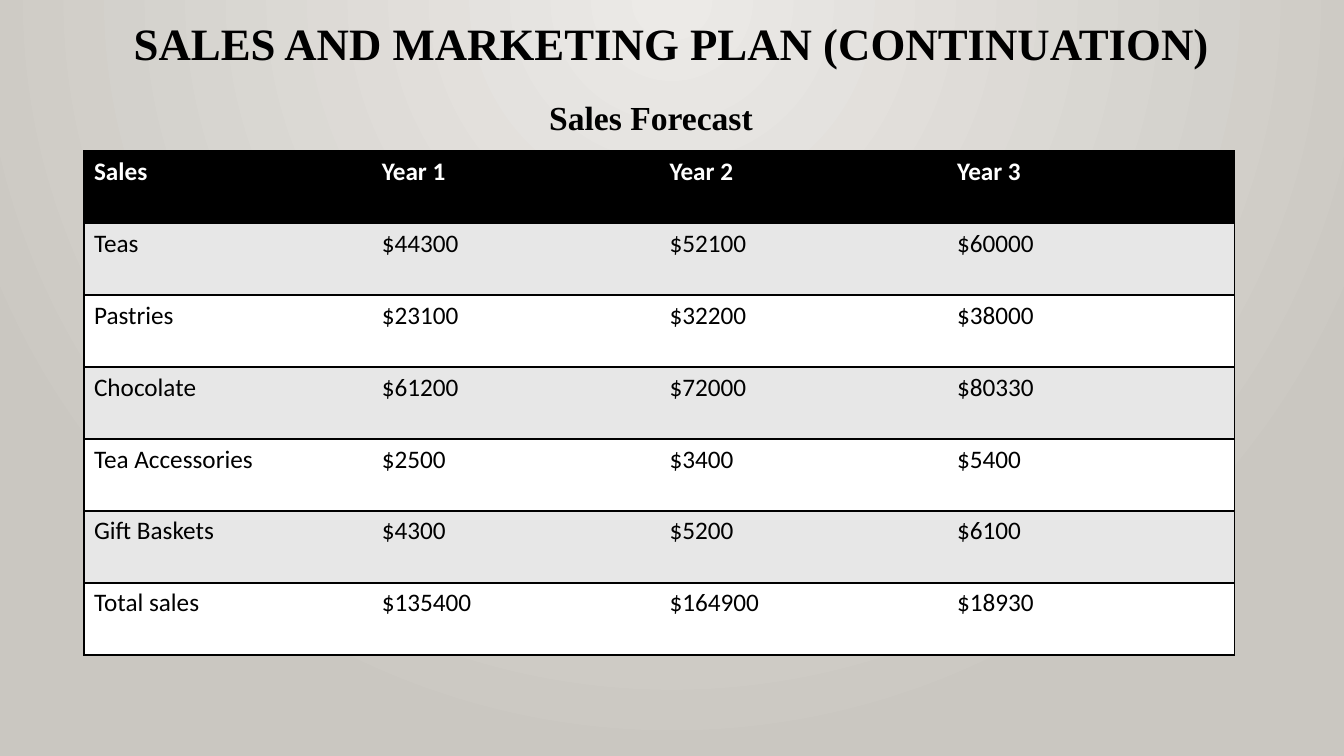
"""Build the sales forecast slide with its three-year table."""
from lxml import etree
from pptx import Presentation
from pptx.dml.color import RGBColor
from pptx.enum.text import MSO_ANCHOR as Anchor, PP_ALIGN as Align
from pptx.oxml import parse_xml
from pptx.oxml.ns import nsdecls, qn
from pptx.util import Emu, Pt

SLIDE_SIZE = (1344, 756)
BLACK = RGBColor(0x00, 0x00, 0x00)
WHITE = RGBColor(0xFF, 0xFF, 0xFF)
BAND = RGBColor(0xE7, 0xE7, 0xE7)
GLOW = RGBColor(0xEC, 0xEA, 0xE7)
STONE = RGBColor(0xCA, 0xC7, 0xC1)
NO_STYLE = "{2D5ABB26-0587-4C30-8999-92F81FD0307C}"

HEADINGS = [
    {"text": "SALES AND MARKETING PLAN (CONTINUATION)", "box": (50, 17, 1243, 71),
     "size": 32, "spacing": 0.9, "left_inset": 10},
    {"text": "Sales Forecast", "box": (42, 84, 1218, 518),
     "size": 24, "spacing": 1.2, "left_inset": 10},
]
TABLE_BOX = (84, 151, 1151, 504)
SALES = [
    ("Sales", "Year 1", "Year 2", "Year 3"),
    ("Teas", "$44300", "$52100", "$60000"),
    ("Pastries", "$23100", "$32200", "$38000"),
    ("Chocolate", "$61200", "$72000", "$80330"),
    ("Tea Accessories", "$2500", "$3400", "$5400"),
    ("Gift Baskets", "$4300", "$5200", "$6100"),
    ("Total sales", "$135400", "$164900", "$18930"),
]


def px(length):
    return Emu(length * 9525 * 96 * 10 // 1008)


def set_font(font, color, **values):
    for name, value in values.items():
        setattr(font, name, value)
    font.color.rgb = color


def paint_background(slide):
    fill = slide.background.fill
    fill.gradient()
    for stop, color in zip(fill.gradient_stops, (GLOW, STONE)):
        stop.color.rgb = color
    gradient = next(slide.element.iter(qn("a:gradFill")))
    gradient.remove(gradient.find(qn("a:lin")))
    circle = etree.SubElement(gradient, qn("a:path"), {"path": "circle"})
    center = {"l": "43000", "t": "0", "r": "43000", "b": "100000"}
    etree.SubElement(circle, qn("a:fillToRect"), center)


def add_heading(slide, text, box, size, spacing, left_inset):
    frame = slide.shapes.add_textbox(*map(px, box)).text_frame
    frame.word_wrap = True
    frame.vertical_anchor = Anchor.TOP
    frame.margin_left = px(left_inset)
    paragraph = frame.paragraphs[0]
    paragraph.text = text
    paragraph.alignment = Align.CENTER
    paragraph.line_spacing = spacing
    set_font(paragraph.font, BLACK, name="Times New Roman", size=Pt(size), bold=True)


def add_border(cell, side):
    properties = cell._tc.get_or_add_tcPr()
    properties.append(parse_xml(
        f'<a:ln{side} {nsdecls("a")} w="12700"><a:solidFill>'
        f'<a:srgbClr val="{BLACK}"/></a:solidFill></a:ln{side}>'))


def add_sales_table(slide):
    columns = len(SALES[0])
    frame = slide.shapes.add_table(len(SALES), columns, *map(px, TABLE_BOX))
    table = frame.table
    next(frame._element.iter(qn("a:tableStyleId"))).text = NO_STYLE
    for row, labels in enumerate(SALES):
        header = row == 0
        fill = BLACK if header else BAND if row % 2 else WHITE
        for column, label in enumerate(labels):
            cell = table.cell(row, column)
            outer = {0: "L", columns - 1: "R"}.get(column, "")
            for side in outer + "TB":
                add_border(cell, side)
            cell.fill.solid()
            cell.fill.fore_color.rgb = fill
            cell.text = label
            set_font(cell.text_frame.paragraphs[0].font, WHITE if header else BLACK,
                     name="Calibri", size=Pt(18), bold=header)


def main():
    presentation = Presentation()
    presentation.slide_width, presentation.slide_height = map(px, SLIDE_SIZE)
    slide = presentation.slides.add_slide(presentation.slide_layouts[6])
    paint_background(slide)
    for heading in HEADINGS:
        add_heading(slide, **heading)
    add_sales_table(slide)
    presentation.save("out.pptx")


if __name__ == "__main__":
    main()
